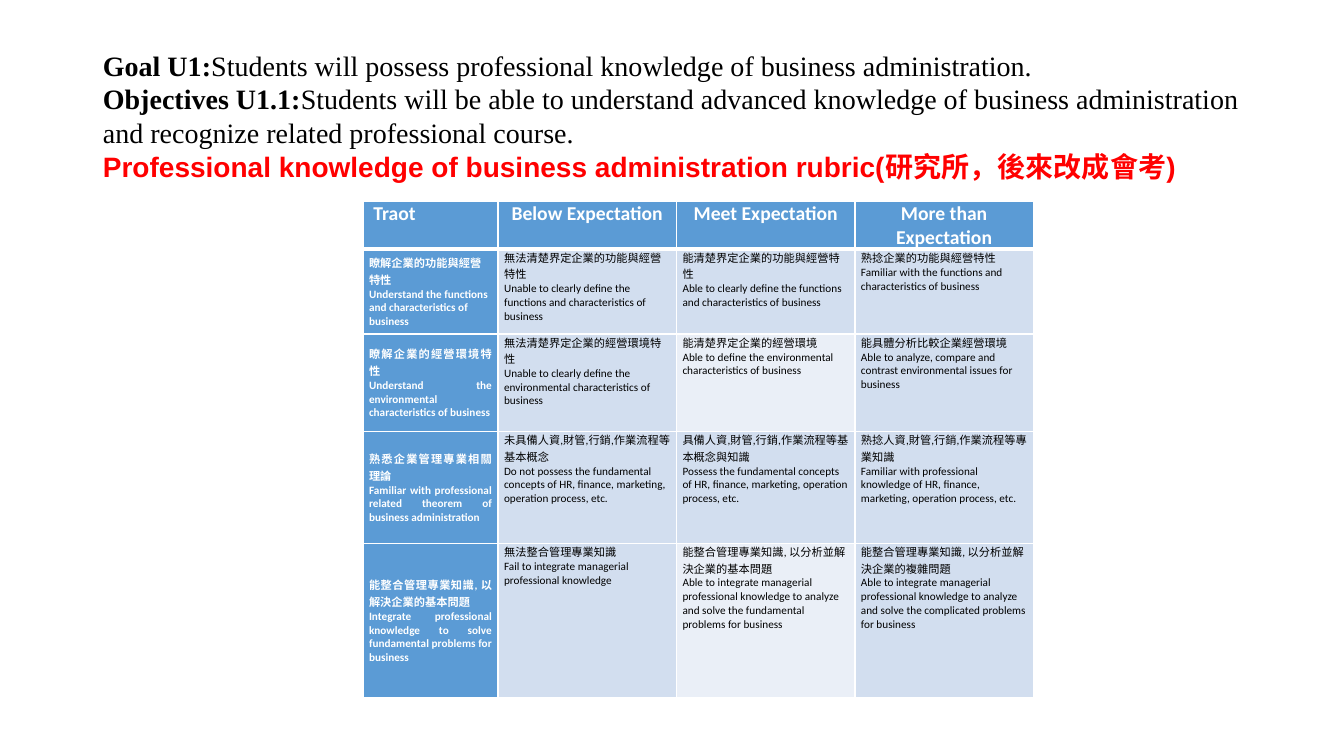
from typing import NamedTuple

from lxml import etree
from pptx import Presentation
from pptx.dml.color import RGBColor
from pptx.enum import text as t
from pptx.oxml import ns
from pptx.util import Inches, Pt

WHITE = RGBColor(0xFF, 0xFF, 0xFF)
BLACK = RGBColor(0, 0, 0)
RED = RGBColor(0xFF, 0, 0)
BLUE = RGBColor(0x5B, 0x9B, 0xD5)
PALE_BLUE = RGBColor(0xD2, 0xDE, 0xEF)
PALEST_BLUE = RGBColor(0xEA, 0xEF, 0xF7)

LEFT, CENTER, JUSTIFY = t.PP_ALIGN.LEFT, t.PP_ALIGN.CENTER, t.PP_ALIGN.JUSTIFY
TOP, MIDDLE = t.MSO_ANCHOR.TOP, t.MSO_ANCHOR.MIDDLE


class TextStyle(NamedTuple):
    font: str
    size: float
    color: RGBColor
    bold: bool = False


class CellStyle(NamedTuple):
    text: TextStyle
    fill: RGBColor
    align: t.PP_ALIGN = LEFT
    anchor: t.MSO_ANCHOR = TOP
    bottom_line: float = 1


class Bilingual(NamedTuple):
    chinese: str
    english: str


GOAL_LABEL = TextStyle("Times New Roman", 20, BLACK, True)
GOAL_TEXT = TextStyle("Times New Roman", 20, BLACK)
RUBRIC_NAME = TextStyle("Arial", 20, RED, True)
HEADER_TEXT = TextStyle("Calibri", 14, WHITE, True)
TRAIT_TEXT = TextStyle("Calibri", 8, WHITE, True)
LEVEL_TEXT = TextStyle("Calibri", 8, BLACK)

TITLE_LINES = [
    [("Goal U1:", GOAL_LABEL),
     ("Students will possess professional knowledge of business administration.", GOAL_TEXT)],
    [("Objectives U1.1:", GOAL_LABEL),
     ("Students will be able to understand advanced knowledge of business administration "
      "and recognize related professional course.", GOAL_TEXT)],
    [("Professional knowledge of business administration rubric(研究所，後來改成會考)", RUBRIC_NAME)],
]

HEADERS = [" Traot", "Below Expectation", "Meet Expectation", "More than Expectation"]
RUBRIC = [
    [Bilingual("瞭解企業的功能與經營特性",
               "Understand the functions and characteristics of business"),
     Bilingual("無法清楚界定企業的功能與經營特性",
               "Unable to clearly define the functions and characteristics of business"),
     Bilingual("能清楚界定企業的功能與經營特性",
               "Able to clearly define the functions and characteristics of business"),
     Bilingual("熟捻企業的功能與經營特性",
               "Familiar with the functions and characteristics of business")],
    [Bilingual("瞭解企業的經營環境特性",
               "Understand the environmental characteristics of business"),
     Bilingual("無法清楚界定企業的經營環境特性",
               "Unable to clearly define the environmental characteristics of business"),
     Bilingual("能清楚界定企業的經營環境",
               "Able to define the environmental characteristics of business"),
     Bilingual("能具體分析比較企業經營環境",
               "Able to analyze, compare and contrast environmental issues for business")],
    [Bilingual("熟悉企業管理專業相關理論",
               "Familiar with professional related theorem of business administration"),
     Bilingual("未具備人資,財管,行銷,作業流程等基本概念",
               "Do not possess the fundamental concepts of HR, finance, marketing, "
               "operation process, etc."),
     Bilingual("具備人資,財管,行銷,作業流程等基本概念與知識",
               "Possess the fundamental concepts of HR, finance, marketing, operation process, etc."),
     Bilingual("熟捻人資,財管,行銷,作業流程等專業知識",
               "Familiar with professional knowledge of HR, finance, marketing, "
               "operation process, etc.")],
    [Bilingual("能整合管理專業知識, 以解決企業的基本問題",
               "Integrate professional knowledge to solve fundamental problems for business"),
     Bilingual("無法整合管理專業知識",
               "Fail to integrate managerial professional knowledge"),
     Bilingual("能整合管理專業知識, 以分析並解決企業的基本問題",
               "Able to integrate managerial professional knowledge to analyze and solve "
               "the fundamental problems for business"),
     Bilingual("能整合管理專業知識, 以分析並解決企業的複雜問題",
               "Able to integrate managerial professional knowledge to analyze and solve "
               "the complicated problems for business")],
]
PALEST_CELLS = {(2, 2), (4, 2)}
COLUMN_WIDTHS = [1.34, 1.77, 1.77, 1.77]
ROW_HEIGHTS = [0.3, 0.84, 0.97, 1.11, 1.53]


def add_run(paragraph, text: str, style: TextStyle) -> None:
    run = paragraph.add_run()
    run.text = text
    run.font.name = style.font
    run.font.size = Pt(style.size)
    run.font.bold = style.bold
    run.font.color.rgb = style.color


def add_border(cell, side: str, width: float) -> None:
    properties = cell._tc.get_or_add_tcPr()
    line = etree.SubElement(properties, ns.qn(f"a:ln{side}"), w=str(Pt(width)))
    fill = etree.SubElement(line, ns.qn("a:solidFill"))
    etree.SubElement(fill, ns.qn("a:srgbClr"), val=str(WHITE))


def fill_cell(cell, texts: list[str], style: CellStyle, top_line: float) -> None:
    for side, width in (("L", 1), ("R", 1), ("T", top_line), ("B", style.bottom_line)):
        add_border(cell, side, width)
    cell.fill.solid()
    cell.fill.fore_color.rgb = style.fill
    cell.margin_left = cell.margin_right = Inches(0.06)
    cell.margin_top = cell.margin_bottom = 0
    cell.vertical_anchor = style.anchor
    frame = cell.text_frame
    for index, text in enumerate(texts):
        paragraph = frame.add_paragraph() if index else frame.paragraphs[0]
        paragraph.alignment = style.align
        add_run(paragraph, text, style.text)


def style_for(row: int, column: int) -> CellStyle:
    if row == 0:
        return CellStyle(HEADER_TEXT, BLUE, CENTER if column else LEFT, bottom_line=3)
    if column == 0:
        return CellStyle(TRAIT_TEXT, BLUE, LEFT if row == 1 else JUSTIFY, MIDDLE)
    return CellStyle(LEVEL_TEXT, PALEST_BLUE if (row, column) in PALEST_CELLS else PALE_BLUE)


def add_title(slide) -> None:
    title = slide.shapes.title
    title.left, title.top = Inches(0.92), Inches(0.42)
    title.width, title.height = Inches(11.5), Inches(1.45)
    frame = title.text_frame
    frame.word_wrap = True
    frame.auto_size = t.MSO_AUTO_SIZE.NONE
    frame.vertical_anchor = MIDDLE
    paragraph = frame.paragraphs[0]
    paragraph.alignment = LEFT
    for index, line in enumerate(TITLE_LINES):
        if index:
            paragraph.add_line_break()
        for text, style in line:
            add_run(paragraph, text, style)


def add_rubric(slide) -> None:
    frame = slide.shapes.add_table(
        len(ROW_HEIGHTS), len(COLUMN_WIDTHS), Inches(3.6), Inches(2),
        Inches(sum(COLUMN_WIDTHS)), Inches(sum(ROW_HEIGHTS)))
    table = frame.table
    table.horz_banding = False
    for column, width in zip(table.columns, COLUMN_WIDTHS):
        column.width = Inches(width)
    for row, height in zip(table.rows, ROW_HEIGHTS):
        row.height = Inches(height)
    rows = [[[header] for header in HEADERS]] + [[list(pair) for pair in row] for row in RUBRIC]
    for row, cells in enumerate(rows):
        for column, texts in enumerate(cells):
            top_line = 3 if row == 1 else 1
            fill_cell(table.cell(row, column), texts, style_for(row, column), top_line)


def main() -> None:
    presentation = Presentation()
    presentation.slide_width, presentation.slide_height = Inches(13.33), Inches(7.5)
    slide = presentation.slides.add_slide(presentation.slide_layouts[5])
    add_title(slide)
    add_rubric(slide)
    presentation.save("out.pptx")


if __name__ == "__main__":
    main()
